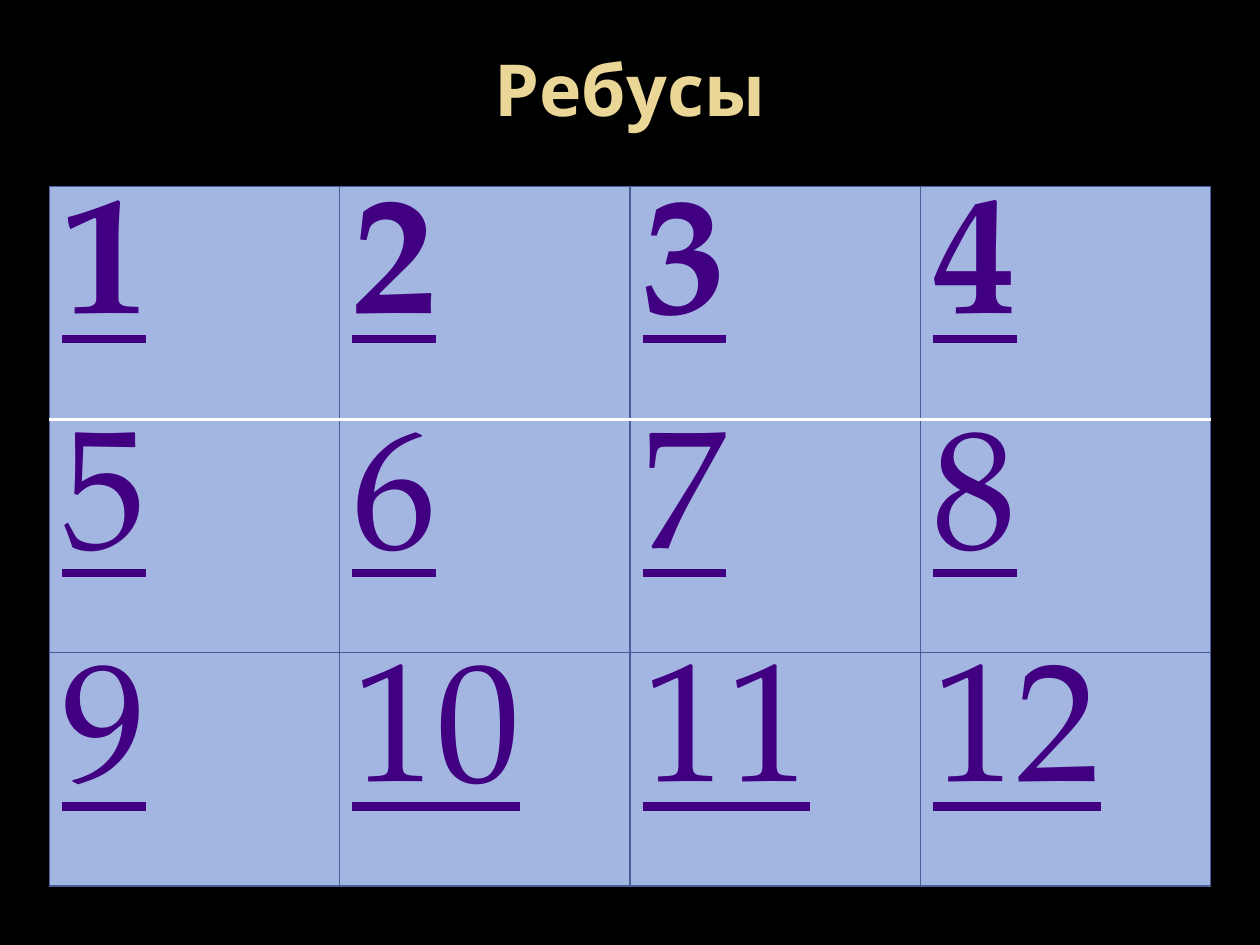
from lxml import etree
from pptx import Presentation
from pptx.dml.color import RGBColor
from pptx.enum.text import MSO_ANCHOR, PP_ALIGN
from pptx.oxml.ns import qn
from pptx.util import Cm, Pt

MIDDLE = MSO_ANCHOR.MIDDLE
CENTER = PP_ALIGN.CENTER

# Content
TITLE = "Ребусы"
PUZZLES = [
    ["1", "2", "3", "4"],
    ["5", "6", "7", "8"],
    ["9", "10", "11", "12"],
]

# Style
COLORS = {
    "background": "000000",
    "title": "EAD696",
    "number": "410082",
    "cell": "A3B6E2",
    "grid": "465F9A",
    "header_line": "FFFFFF",
}
TITLE_FONT = "Noto Sans"
NUMBER_FONT = "TeX Gyre Pagella"
COLUMN_WIDTH = Cm(5.85)
ROW_HEIGHT = Cm(4.7)


def color(name):
    return RGBColor.from_string(COLORS[name])


def add_border(cell, side, color_name, width):
    properties = cell._tc.get_or_add_tcPr()
    line = etree.SubElement(properties, qn(f"a:ln{side}"), w=str(Pt(width)))
    fill = etree.SubElement(line, qn("a:solidFill"))
    etree.SubElement(fill, qn("a:srgbClr"), val=COLORS[color_name])


def add_title(slide):
    box = slide.shapes.add_textbox(Cm(1.27), Cm(0.76), Cm(22.86), Cm(2.01))
    frame = box.text_frame
    frame.word_wrap = True
    frame.vertical_anchor = MIDDLE
    paragraph = frame.paragraphs[0]
    paragraph.text = TITLE
    paragraph.alignment = CENTER
    font = paragraph.font
    font.name, font.size, font.bold = TITLE_FONT, Pt(41), True
    font.color.rgb = color("title")


def fill_cell(cell, text, row):
    # The line between the first two rows is heavier and white
    for side in "LRTB":
        below_header = (row, side) in ((0, "B"), (1, "T"))
        if below_header:
            add_border(cell, side, "header_line", 2)
        else:
            add_border(cell, side, "grid", 0.75)
    cell.fill.solid()
    cell.fill.fore_color.rgb = color("cell")

    paragraph = cell.text_frame.paragraphs[0]
    run = paragraph.add_run()
    run.text = text
    font = run.font
    font.name, font.size = NUMBER_FONT, Pt(96)
    font.bold, font.underline = row == 0, True
    font.color.rgb = color("number")


def add_puzzle_table(slide):
    rows, columns = len(PUZZLES), len(PUZZLES[0])
    table = slide.shapes.add_table(
        rows, columns, Cm(1), Cm(3.76), COLUMN_WIDTH * columns, ROW_HEIGHT * rows
    ).table
    for row, numbers in enumerate(PUZZLES):
        for column, number in enumerate(numbers):
            fill_cell(table.cell(row, column), number, row)


def main():
    presentation = Presentation()
    presentation.slide_width, presentation.slide_height = Cm(25.4), Cm(19.05)
    slide = presentation.slides.add_slide(presentation.slide_layouts[6])
    slide.background.fill.solid()
    slide.background.fill.fore_color.rgb = color("background")
    add_title(slide)
    add_puzzle_table(slide)
    presentation.save("out.pptx")


if __name__ == "__main__":
    main()
